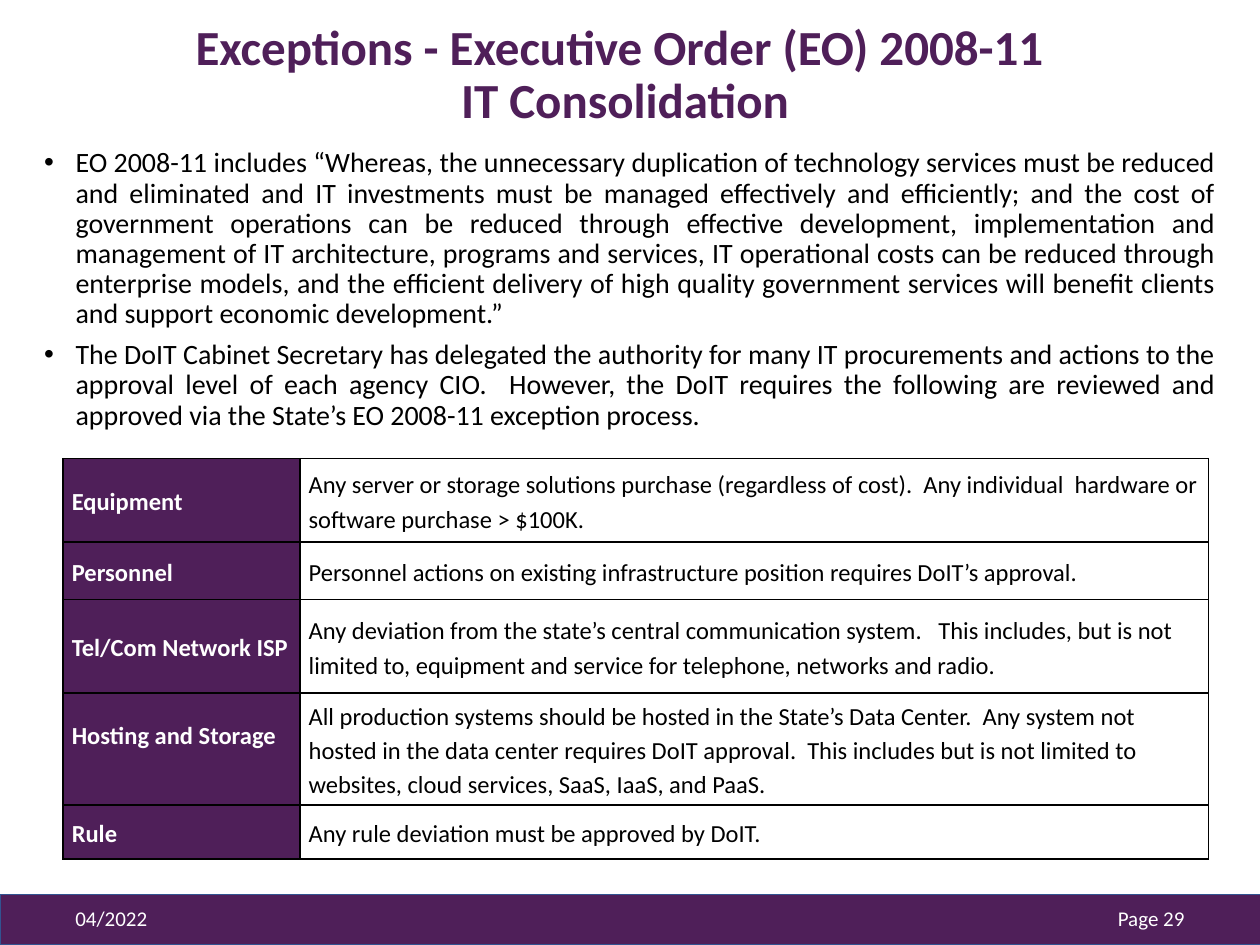
"""Build the slide on exceptions to Executive Order 2008-11, IT Consolidation."""
import pptx
import pptx.dml.color
import pptx.enum.shapes
import pptx.enum.text
import pptx.oxml
import pptx.oxml.ns
import pptx.util

Inches = pptx.util.Inches
Pt = pptx.util.Pt
RGBColor = pptx.dml.color.RGBColor
ALIGN = pptx.enum.text.PP_ALIGN
ANCHOR = pptx.enum.text.MSO_ANCHOR

PURPLE = RGBColor(0x4F, 0x1F, 0x59)
BLUE = RGBColor(0x32, 0x54, 0x91)
BLACK = RGBColor(0, 0, 0)
WHITE = RGBColor(255, 255, 255)
FONT = "Calibri"

TITLE = ["Exceptions - Executive Order (EO) 2008-11 ", "IT Consolidation"]
BULLETS = [
    "EO 2008-11 includes “Whereas, the unnecessary duplication of technology services must be "
    "reduced and eliminated and IT investments must be managed effectively and efficiently; and "
    "the cost of government operations can be reduced through effective development, "
    "implementation and management of IT architecture, programs and services, IT operational "
    "costs can be reduced through enterprise models, and the efficient delivery of high quality "
    "government services will benefit clients and support economic development.” ",
    "The DoIT Cabinet Secretary has delegated the authority for many IT procurements and actions "
    "to the approval level of each agency CIO.  However, the DoIT requires the following are "
    "reviewed and approved via the State’s EO 2008-11 exception process.",
]
ROWS = [
    ("Equipment", 0.66,
     "Any server or storage solutions purchase (regardless of cost).  Any individual  hardware "
     "or software purchase > $100K."),
    ("Personnel", 0.46,
     "Personnel actions on existing infrastructure position requires DoIT’s approval."),
    ("Tel/Com Network ISP", 0.74,
     "Any deviation from the state’s central communication system.   This includes, but is not "
     "limited to, equipment and service for telephone, networks and radio."),
    ("Hosting and Storage", 0.89,
     "All production systems should be hosted in the State’s Data Center.  Any system not hosted "
     "in the data center requires DoIT approval.  This includes but is not limited to websites, "
     "cloud services, SaaS, IaaS, and PaaS."),
    ("Rule", 0.43, "Any rule deviation must be approved by DoIT."),
]
COLUMNS = [1.88, 7.21]
LABEL_LIFT = {"Hosting and Storage": 0.24}
FOOTER = [("04/2022", 0.5, ALIGN.LEFT), ("Page 29", 7.17, ALIGN.RIGHT)]


def write(p, lines, size=14, color=BLACK, bold=False, align=ALIGN.LEFT, spacing=1.0, after=0):
    """Fill a paragraph with formatted lines."""
    p.alignment, p.line_spacing = align, spacing
    p.space_before, p.space_after = Pt(0), Pt(after)
    for i, line in enumerate(lines):
        if i:
            p.add_line_break()
        r = p.add_run()
        r.text = line
        r.font.name, r.font.size, r.font.bold = FONT, Pt(size), bold
        r.font.color.rgb = color


def place(sp, left, top, width, height, anchor):
    """Position a shape and prepare its text frame."""
    sp.left, sp.top, sp.width, sp.height = map(Inches, (left, top, width, height))
    tf = sp.text_frame
    tf.word_wrap, tf.vertical_anchor = True, anchor
    tf.auto_size = pptx.enum.text.MSO_AUTO_SIZE.NONE
    return tf


def add_bullet(p):
    """Give a paragraph a hanging bullet."""
    pPr = p._p.get_or_add_pPr()
    pPr.set("marL", str(Inches(0.25)))
    pPr.set("indent", str(-Inches(0.25)))
    for tag, attrs in (("buFont", 'typeface="Arial"'), ("buChar", 'char="•"')):
        pPr.append(pptx.oxml.parse_xml(f'<a:{tag} {pptx.oxml.ns.nsdecls("a")} {attrs}/>'))


def add_borders(cell):
    """Draw a thin black line on each side of a cell."""
    tcPr = cell._tc.get_or_add_tcPr()
    for i, side in enumerate("LRTB"):
        tcPr.insert(i, pptx.oxml.parse_xml(
            f'<a:ln{side} {pptx.oxml.ns.nsdecls("a")} w="{Pt(1)}"><a:solidFill>'
            f'<a:srgbClr val="{BLACK}"/></a:solidFill></a:ln{side}>'))


def add_table(s):
    """Add the table of exceptions."""
    frame = s.shapes.add_table(len(ROWS), 2, Inches(0.5), Inches(3.64), Inches(sum(COLUMNS)),
                               Inches(sum(height for _, height, _ in ROWS)))
    table = frame.table
    table.first_row = table.horz_banding = False
    for column, width in zip(table.columns, COLUMNS):
        column.width = Inches(width)
    for row, (label, height, rule) in zip(table.rows, ROWS):
        row.height = Inches(height)
        for cell, text, is_label in zip(row.cells, (label, rule), (True, False)):
            cell.vertical_anchor = ANCHOR.MIDDLE
            cell.margin_left = cell.margin_right = Inches(0.07)
            cell.margin_top = 0
            cell.margin_bottom = Inches(LABEL_LIFT.get(text, 0))
            if is_label:
                cell.fill.solid()
                cell.fill.fore_color.rgb = PURPLE
            else:
                cell.fill.background()
            add_borders(cell)
            write(cell.text_frame.paragraphs[0], [text], color=WHITE if is_label else BLACK,
                  bold=is_label, spacing=1.15)


def main():
    """Build and save the slide."""
    prs = pptx.Presentation()
    prs.slide_width, prs.slide_height = Inches(10), Inches(7.5)
    s = prs.slides.add_slide(prs.slide_layouts[1])

    band = s.shapes.add_shape(pptx.enum.shapes.MSO_SHAPE.RECTANGLE, 0, Inches(7.1),
                              Inches(10.01), Inches(0.4))
    band.shadow.inherit = False
    band.fill.solid()
    band.fill.fore_color.rgb = PURPLE
    band.line.color.rgb, band.line.width = BLUE, Pt(1)

    tf = place(s.shapes.title, 0.25, 0.17, 9.42, 0.87, ANCHOR.MIDDLE)
    write(tf.paragraphs[0], TITLE, size=28, color=PURPLE, bold=True, align=ALIGN.CENTER,
          spacing=0.9)

    tf = place(s.placeholders[1], 0.25, 1.13, 9.5, 5.67, ANCHOR.TOP)
    for i, text in enumerate(BULLETS):
        p = tf.add_paragraph() if i else tf.paragraphs[0]
        write(p, [text], size=16, align=ALIGN.JUSTIFY, spacing=0.9, after=6)
        add_bullet(p)

    for text, left, align in FOOTER:
        tf = place(s.shapes.add_textbox(0, 0, 0, 0), left, 7.09, 2.33, 0.4, ANCHOR.MIDDLE)
        write(tf.paragraphs[0], [text], size=12, color=WHITE, align=align)

    add_table(s)
    prs.save("out.pptx")


if __name__ == "__main__":
    main()
